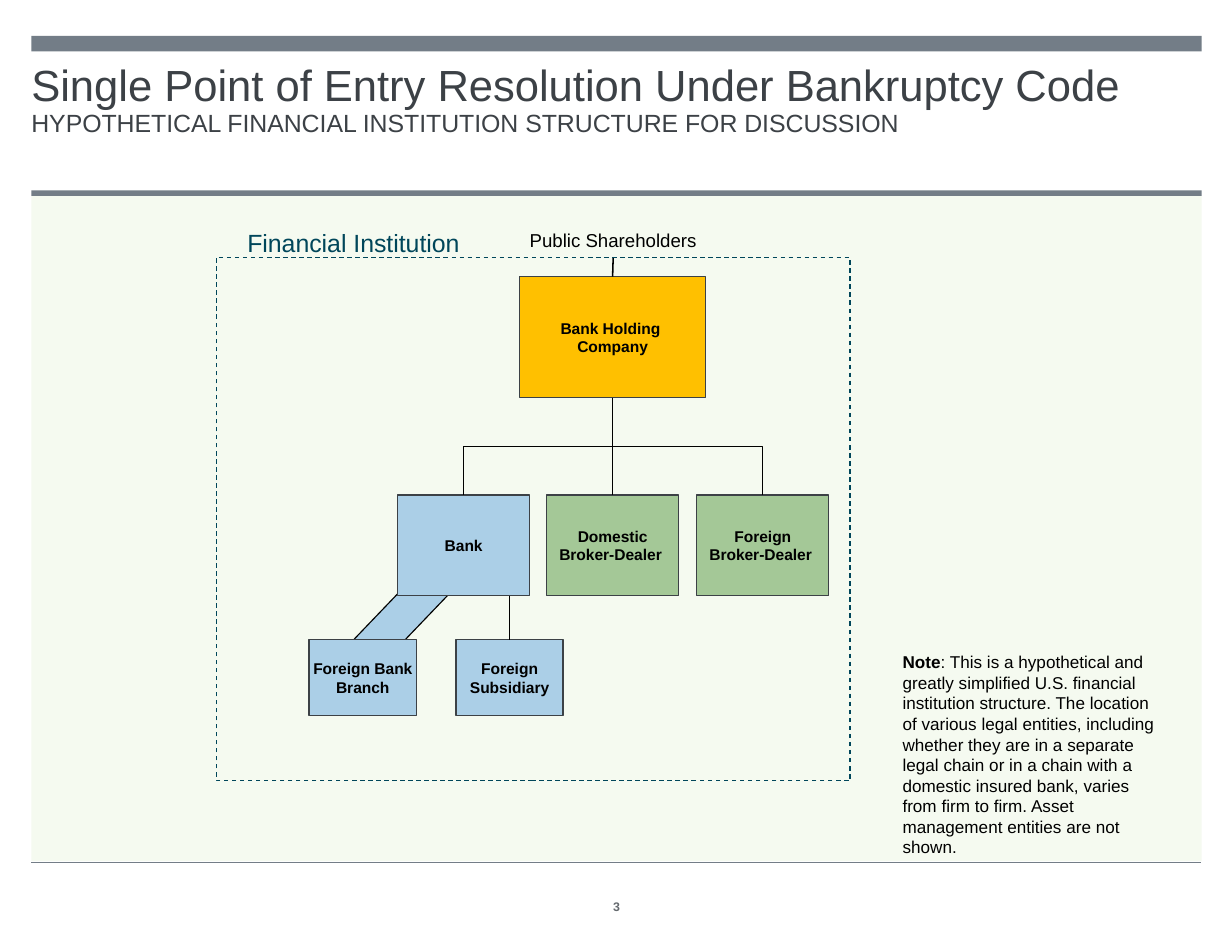
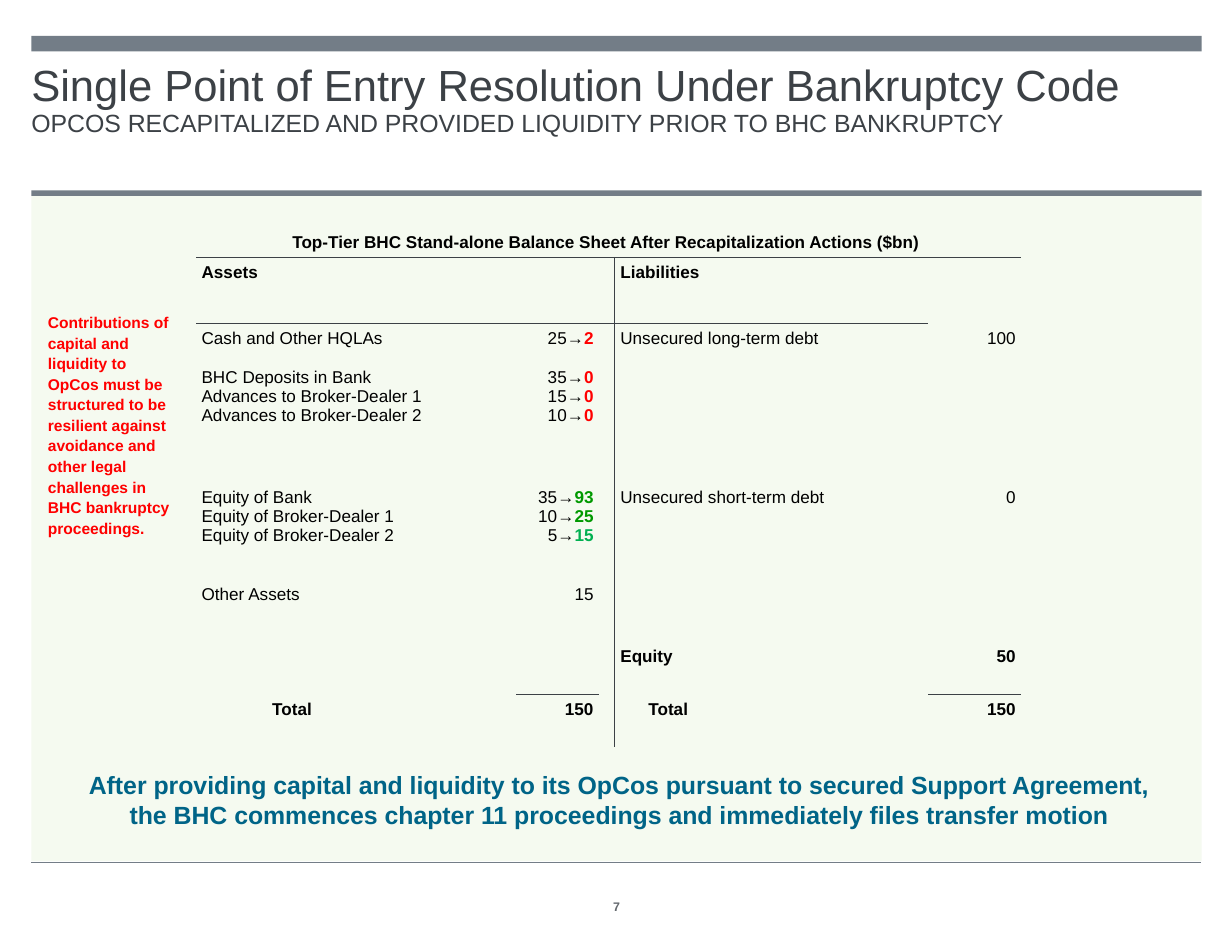
from dataclasses import dataclass

from lxml.etree import SubElement
from pptx import Presentation
from pptx.dml.color import RGBColor
from pptx.enum.dml import MSO_LINE
from pptx.enum.shapes import MSO_CONNECTOR, MSO_SHAPE
from pptx.enum.text import MSO_ANCHOR, PP_ALIGN
from pptx.oxml.ns import qn
from pptx.util import Inches, Pt

FONT = "Arial"
COLORS = {
    "panel": "F5FAF0", "band": "737D87", "title": "3C4146", "number": "64696E",
    "black": "000000", "outline": "3C4146", "institution": "00465A",
    "holding": "FFC000", "bank": "ABCFE7", "dealer": "A4C897",
    "red": "FF0000", "green": "009900", "light green": "00B050", "message": "006487",
}
TITLE = "Single Point of Entry Resolution Under Bankruptcy Code"


@dataclass(frozen=True)
class Run:
    text: str
    size: float | None = None
    bold: bool | None = None
    color: str | None = None


@dataclass(frozen=True)
class Line:
    runs: tuple[Run, ...]
    gap: float = 0


@dataclass(frozen=True)
class Entity:
    name: str
    left: float
    top: float
    width: float
    height: float
    color: str
    border: float = 0.75


@dataclass(frozen=True)
class Entry:
    """Content of one balance sheet cell."""
    row: int
    column: int
    content: str | list
    bold: bool = False
    indent: float = 0


def rgb(name: str) -> RGBColor:
    return RGBColor.from_string(COLORS[name])


# Text
def write_text(frame, content, *, size=11, color="black", bold=False,
               align=PP_ALIGN.LEFT, spacing=1.0) -> None:
    """Write a string (one paragraph per row) or a list of Lines."""
    if isinstance(content, str):
        content = [Line((Run(row),)) for row in content.split("\n")]
    for index, line in enumerate(content):
        paragraph = frame.paragraphs[0] if index == 0 else frame.add_paragraph()
        paragraph.alignment = align
        paragraph.line_spacing = spacing
        paragraph.space_before = Pt(line.gap)
        for part in line.runs:
            run = paragraph.add_run()
            run.text = part.text
            run.font.name = FONT
            run.font.size = Pt(part.size or size)
            run.font.bold = bold if part.bold is None else part.bold
            run.font.color.rgb = rgb(part.color or color)


def add_text(slide, content, left, top, width, height, *,
             anchor=MSO_ANCHOR.TOP, inset=True, **style):
    box = slide.shapes.add_textbox(Inches(left), Inches(top), Inches(width), Inches(height))
    frame = box.text_frame
    frame.word_wrap = True
    frame.vertical_anchor = anchor
    if not inset:
        frame.margin_left = frame.margin_right = frame.margin_top = frame.margin_bottom = 0
    write_text(frame, content, **style)
    return box


# Shapes and lines
def add_block(slide, left, top, width, height, *, fill=None, line=None,
              weight=0.75, kind=MSO_SHAPE.RECTANGLE):
    shape = slide.shapes.add_shape(kind, Inches(left), Inches(top), Inches(width), Inches(height))
    shape.shadow.inherit = False
    if fill:
        shape.fill.solid()
        shape.fill.fore_color.rgb = rgb(fill)
    else:
        shape.fill.background()
    if line:
        shape.line.color.rgb = rgb(line)
        shape.line.width = Pt(weight)
    else:
        shape.line.fill.background()
    return shape


def add_line(slide, x1, y1, x2, y2, *, color="black", kind=MSO_CONNECTOR.STRAIGHT):
    """Draw a one-point line between two points given as lengths."""
    line = slide.shapes.add_connector(kind, x1, y1, x2, y2)
    line.line.color.rgb = rgb(color)
    line.line.width = Pt(1)
    SubElement(line.element.spPr, qn("a:effectLst"))
    return line


def join(slide, upper, lower) -> None:
    """Join the bottom of one shape to the top of another."""
    line = add_line(slide, 0, 0, 0, 0)
    line.begin_connect(upper, 2)
    line.end_connect(lower, 0)


def add_elbow(slide, parent, child) -> None:
    """Draw a down-across-down line from parent to child as a turned elbow."""
    start_x, start_y = parent.left + parent.width // 2, parent.top + parent.height
    end_x, end_y = child.left + child.width // 2, child.top
    drop, reach = end_y - start_y, abs(end_x - start_x)
    left = (start_x + end_x - drop) // 2
    top = (start_y + end_y - reach) // 2
    to_right = end_x > start_x
    x1, x2 = (left + drop, left) if to_right else (left, left + drop)
    elbow = add_line(slide, x1, top, x2, top + reach, kind=MSO_CONNECTOR.ELBOW)
    elbow.rotation_degrees = 270 if to_right else 90
    elbow.element.spPr.find(qn("a:xfrm")).set("rot", str(elbow.rotation_degrees * 60000)) \
        if hasattr(elbow, "rotation_degrees") else None


def add_entity(slide, entity: Entity):
    shape = add_block(slide, entity.left, entity.top, entity.width, entity.height,
                      fill=entity.color, line="outline", weight=entity.border)
    frame = shape.text_frame
    frame.word_wrap = False
    frame.vertical_anchor = MSO_ANCHOR.MIDDLE
    frame.margin_left = frame.margin_right = Inches(0.11)
    frame.margin_top = frame.margin_bottom = Inches(0.06)
    write_text(frame, entity.name, size=10, bold=True, align=PP_ALIGN.CENTER)
    return shape


# Parts shared by the slides
def add_page(presentation, subtitle: str, number: int):
    slide = presentation.slides.add_slide(presentation.slide_layouts[6])
    add_block(slide, 0.28, 1.75, 10.45, 5.94, fill="panel")
    add_line(slide, Inches(0.28), Inches(7.7), Inches(10.72), Inches(7.7), color="band")
    for top, height in ((1.7, 0.05), (0.32, 0.14)):
        add_block(slide, 0.28, top, 10.45, height, fill="band")
    heading = [Line((Run(TITLE, size=28),)), Line((Run(subtitle, size=16),))]
    add_text(slide, heading, 0.28, 0.57, 10.45, 1.13, inset=False, color="title", spacing=0.9)
    add_text(slide, str(number), 5.05, 7.97, 0.91, 0.25, anchor=MSO_ANCHOR.MIDDLE,
             size=8, bold=True, color="number", align=PP_ALIGN.CENTER)
    return slide


# Institution structure
ENTITIES = {
    "holding": Entity("Bank Holding \nCompany", 4.64, 2.47, 1.66, 1.08, "holding"),
    "bank": Entity("Bank", 3.55, 4.42, 1.18, 0.9, "bank"),
    "domestic": Entity("Domestic\nBroker-Dealer ", 4.88, 4.42, 1.18, 0.9, "dealer"),
    "foreign": Entity("Foreign\nBroker-Dealer ", 6.22, 4.42, 1.18, 0.9, "dealer"),
    "branch": Entity("Foreign Bank\nBranch", 2.76, 5.71, 0.96, 0.68, "bank"),
    "subsidiary": Entity("Foreign\nSubsidiary", 4.07, 5.71, 0.96, 0.68, "bank", 1),
}
NOTE = (": This is a hypothetical and greatly simplified U.S. financial institution structure. "
        "The location of various legal entities, including whether they are in a separate legal "
        "chain or in a chain with a domestic insured bank, varies from firm to firm. "
        "Asset management entities are not shown.")


def build_structure(presentation) -> None:
    slide = add_page(presentation, "HYPOTHETICAL FINANCIAL INSTITUTION STRUCTURE FOR DISCUSSION", 3)
    add_text(slide, [Line((Run("Note", bold=True), Run(NOTE)))], 7.96, 5.77, 2.48, 1.95)
    shareholders = add_text(slide, "Public Shareholders", 4.54, 1.99, 1.87, 0.31,
                            size=12, align=PP_ALIGN.CENTER)
    add_block(slide, 3.15, 5.24, 0.92, 0.96, fill="bank", line="black",
              kind=MSO_SHAPE.DIAGONAL_STRIPE)
    shapes = {key: add_entity(slide, entity) for key, entity in ENTITIES.items()}

    # Ownership lines
    join(slide, shareholders, shapes["holding"])
    join(slide, shapes["holding"], shapes["domestic"])
    for key in ("bank", "foreign"):
        add_elbow(slide, shapes["holding"], shapes[key])
    link = add_line(slide, Inches(4.55), Inches(5.71), Inches(4.55), Inches(5.32))
    link.begin_connect(shapes["subsidiary"], 0)

    # Boundary of the institution
    boundary = add_block(slide, 1.93, 2.3, 5.66, 4.67, line="institution")
    boundary.line.dash_style = MSO_LINE.DASH
    add_text(slide, "Financial Institution", 2.11, 1.98, 2.23, 0.37, size=16, color="institution")


# Balance sheet
LINE_GAP = 12.6
COLUMNS = (2.86, 0.74, 0.13, 2.8, 0.83)
ROWS = (0.65, 0.59, 1.42, 1.42, 0.47, 0.47)
VALUE_COLUMNS = (1, 4)
HORIZONTAL_RULES = ({(1, column) for column in range(5)}
                    | {(2, column) for column in range(4)}
                    | {(5, column) for column in VALUE_COLUMNS})
VERTICAL_RULES = {(row, 3) for row in range(1, 6)}


def plain(text: str, gap: float = 0) -> Line:
    return Line((Run(text),), gap)


def change(before: int, after: int, color: str, gap: float = 0) -> Line:
    return Line((Run(f"{before}→"), Run(str(after), bold=True, color=color)), gap)


ENTRIES = (
    Entry(1, 0, "Assets", bold=True),
    Entry(1, 3, "Liabilities", bold=True),
    Entry(2, 0, [plain("Cash and Other HQLAs"), plain("BHC Deposits in Bank", LINE_GAP),
                 plain("Advances to Broker-Dealer 1"), plain("Advances to Broker-Dealer 2")]),
    Entry(2, 1, [change(25, 2, "red"), change(35, 0, "red", LINE_GAP),
                 change(15, 0, "red"), change(10, 0, "red")]),
    Entry(2, 3, "Unsecured long-term debt"),
    Entry(2, 4, "100"),
    Entry(3, 0, [plain("Equity of Bank"), plain("Equity of Broker-Dealer 1"),
                 plain("Equity of Broker-Dealer 2"), plain("Other Assets", 2 * LINE_GAP)]),
    Entry(3, 1, [change(35, 93, "green"), change(10, 25, "green"),
                 change(5, 15, "light green"), plain("15", 2 * LINE_GAP)]),
    Entry(3, 3, "Unsecured short-term debt"),
    Entry(3, 4, "0"),
    Entry(4, 3, "Equity", bold=True),
    Entry(4, 4, "50", bold=True),
    Entry(5, 0, "Total", bold=True, indent=0.63),
    Entry(5, 1, "150", bold=True),
    Entry(5, 3, "Total", bold=True, indent=0.25),
    Entry(5, 4, "150", bold=True),
)


def set_borders(cell, row: int, column: int) -> None:
    properties = cell._tc.get_or_add_tcPr()
    sides = {
        "a:lnL": (row, column) in VERTICAL_RULES,
        "a:lnR": (row, column + 1) in VERTICAL_RULES,
        "a:lnT": (row, column) in HORIZONTAL_RULES,
        "a:lnB": (row + 1, column) in HORIZONTAL_RULES,
    }
    for tag, ruled in sides.items():
        border = SubElement(properties, qn(tag), w=str(Pt(1)))
        if ruled:
            fill = SubElement(border, qn("a:solidFill"))
            SubElement(fill, qn("a:srgbClr"), val=COLORS["outline"])
        else:
            SubElement(border, qn("a:noFill"))


def add_balance_sheet(slide) -> None:
    table = slide.shapes.add_table(len(ROWS), len(COLUMNS), Inches(1.75), Inches(1.65),
                                   Inches(sum(COLUMNS)), Inches(sum(ROWS))).table
    table.first_row = table.horz_banding = False
    for column, width in zip(table.columns, COLUMNS):
        column.width = Inches(width)
    for row, height in enumerate(ROWS):
        table.rows[row].height = Inches(height)
        for column in range(len(COLUMNS)):
            cell = table.cell(row, column)
            set_borders(cell, row, column)
            cell.fill.background()
            cell.margin_left = cell.margin_right = Inches(0.05)
            cell.margin_top = cell.margin_bottom = Inches(0.05)
    heading = table.cell(0, 0)
    heading.merge(table.cell(0, len(COLUMNS) - 1))
    heading.vertical_anchor = MSO_ANCHOR.BOTTOM
    write_text(heading.text_frame,
               "Top-Tier BHC Stand-alone Balance Sheet After Recapitalization Actions ($bn) ",
               bold=True, align=PP_ALIGN.CENTER)
    for entry in ENTRIES:
        cell = table.cell(entry.row, entry.column)
        cell.margin_left = Inches(0.05 + entry.indent)
        align = PP_ALIGN.RIGHT if entry.column in VALUE_COLUMNS else PP_ALIGN.LEFT
        write_text(cell.text_frame, entry.content, bold=entry.bold, align=align)


def build_recapitalization(presentation) -> None:
    slide = add_page(presentation,
                     "OPCOS RECAPITALIZED AND PROVIDED LIQUIDITY PRIOR TO BHC BANKRUPTCY", 7)
    add_balance_sheet(slide)
    add_text(slide, "After providing capital and liquidity to its OpCos pursuant to secured Support "
             "Agreement, the BHC commences chapter 11 proceedings and immediately files transfer motion",
             0.57, 6.82, 9.92, 0.64, size=16, bold=True, color="message", align=PP_ALIGN.CENTER)
    add_text(slide, "Contributions of capital and liquidity to OpCos must be structured to be resilient "
             "against avoidance and other legal challenges in BHC bankruptcy proceedings.",
             0.33, 2.73, 1.36, 1.95, size=10, bold=True, color="red", spacing=1.1)


def main() -> None:
    presentation = Presentation()
    presentation.slide_width, presentation.slide_height = Inches(11), Inches(8.5)
    build_structure(presentation)
    build_recapitalization(presentation)
    presentation.save("out.pptx")


if __name__ == "__main__":
    main()
